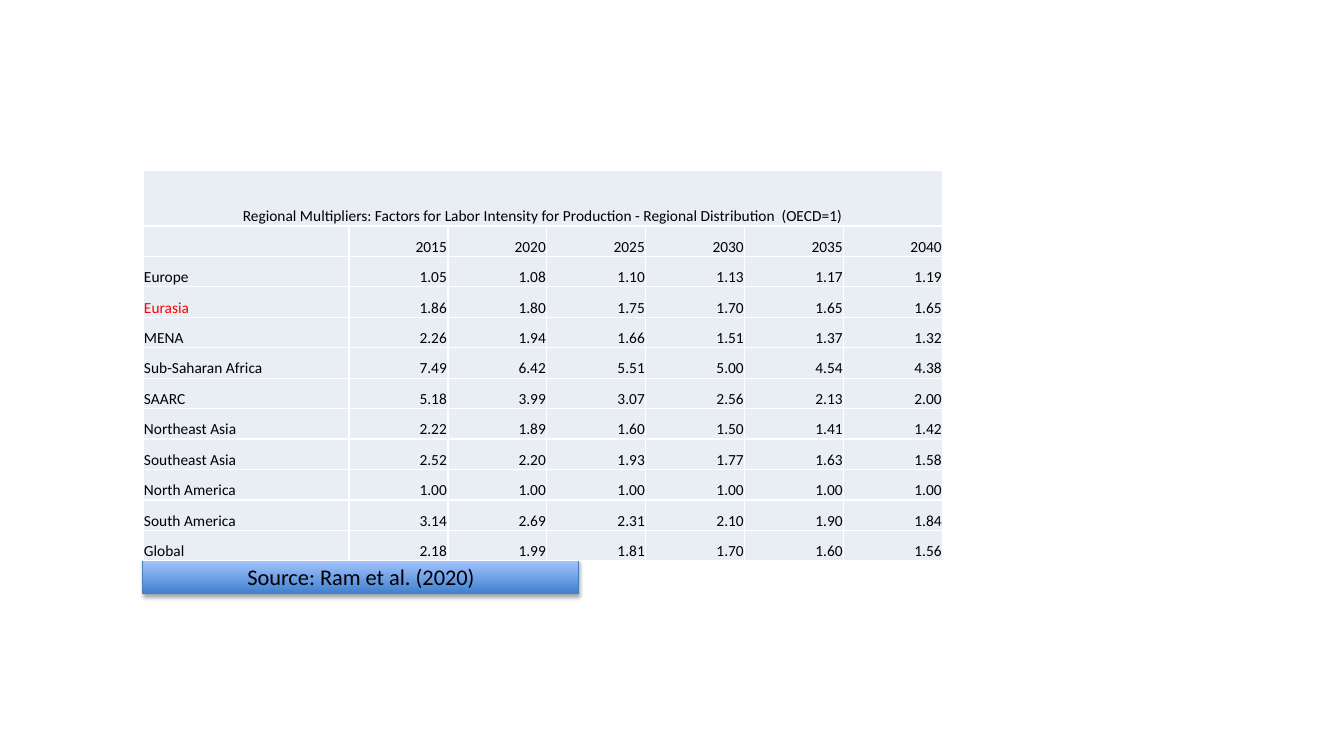
from dataclasses import dataclass

from lxml import etree
from pptx import Presentation
from pptx import util as u
from pptx.dml.color import RGBColor
from pptx.enum import shapes, text
from pptx.oxml import ns

EMU_PER_PX = 914400 / 100.8


@dataclass(frozen=True)
class Theme:
    font: str = "Calibri"
    ink: str = "000000"
    highlight: str = "FF0000"
    cell: str = "E9EDF4"
    border: str = "FFFFFF"
    gradient_dark: str = "3F80CE"
    gradient_light: str = "A4C4FF"
    source_line: str = "4B7EBC"
    table_size: int = 11
    source_size: int = 16


@dataclass(frozen=True)
class Region:
    name: str
    factors: str
    color: str


THEME = Theme()
ALIGN = text.PP_ALIGN

TITLE = ("Regional Multipliers: Factors for Labor Intensity for Production"
         " - Regional Distribution  (OECD=1)")
REGIONS = [
    Region("", "2015 2020 2025 2030 2035 2040", THEME.ink),
    Region("Europe", "1.05 1.08 1.10 1.13 1.17 1.19", THEME.ink),
    Region("Eurasia", "1.86 1.80 1.75 1.70 1.65 1.65", THEME.highlight),
    Region("MENA", "2.26 1.94 1.66 1.51 1.37 1.32", THEME.ink),
    Region("Sub-Saharan Africa", "7.49 6.42 5.51 5.00 4.54 4.38", THEME.ink),
    Region("SAARC", "5.18 3.99 3.07 2.56 2.13 2.00", THEME.ink),
    Region("Northeast Asia", "2.22 1.89 1.60 1.50 1.41 1.42", THEME.ink),
    Region("Southeast Asia", "2.52 2.20 1.93 1.77 1.63 1.58", THEME.ink),
    Region("North America", "1.00 1.00 1.00 1.00 1.00 1.00", THEME.ink),
    Region("South America", "3.14 2.69 2.31 2.10 1.90 1.84", THEME.ink),
    Region("Global", "2.18 1.99 1.81 1.70 1.60 1.56", THEME.ink),
]
NAME_WIDTH, YEAR_WIDTH, YEARS = 206, 99, 6
TITLE_HEIGHT, REGIONS_HEIGHT = 56, 335


def px(length: int) -> int:
    return round(length * EMU_PER_PX)


def rgb(color: str) -> RGBColor:
    return RGBColor.from_string(color)


def write(frame, words: str, size: int, align, color: str) -> None:
    frame.text = words
    paragraph = frame.paragraphs[0]
    paragraph.alignment = align
    for run in paragraph.runs:
        run.font.name = THEME.font
        run.font.size = u.Pt(size)
        run.font.color.rgb = rgb(color)
    if not words:  # keeps the empty cell from stretching its row
        etree.SubElement(paragraph._p, ns.qn("a:endParaRPr"), sz=str(size * 100))


def draw_borders(cell) -> None:
    properties = cell._tc.get_or_add_tcPr()
    for side in ("lnL", "lnR", "lnT", "lnB"):
        line = etree.SubElement(properties, ns.qn(f"a:{side}"), w=str(u.Pt(1)))
        fill = etree.SubElement(line, ns.qn("a:solidFill"))
        etree.SubElement(fill, ns.qn("a:srgbClr"), val=THEME.border)


def style_cell(cell) -> None:
    draw_borders(cell)
    cell.fill.solid()
    cell.fill.fore_color.rgb = rgb(THEME.cell)
    cell.margin_left = cell.margin_right = cell.margin_top = px(1)
    cell.margin_bottom = 0
    cell.vertical_anchor = text.MSO_ANCHOR.BOTTOM


def draw_source(slide) -> None:
    source = slide.shapes.add_shape(
        shapes.MSO_SHAPE.RECTANGLE, px(143), px(560), px(436), px(34))
    source.fill.gradient()
    source.fill.gradient_angle = 90
    colors = (THEME.gradient_dark, THEME.gradient_light)
    for position, (stop, color) in enumerate(zip(source.fill.gradient_stops, colors)):
        stop.position = position
        stop.color.rgb = rgb(color)
    source.line.color.rgb = rgb(THEME.source_line)
    source.line.width = u.Pt(0.75)

    # Soft shadow below the box
    source.shadow.inherit = False
    effects = source._element.spPr.find(ns.qn("a:effectLst"))
    shadow = etree.SubElement(
        effects, ns.qn("a:outerShdw"), blurRad=str(u.Pt(3.1)),
        dist=str(u.Pt(1.8)), dir="5400000", rotWithShape="0")
    tint = etree.SubElement(shadow, ns.qn("a:srgbClr"), val=THEME.ink)
    etree.SubElement(tint, ns.qn("a:alpha"), val="35000")

    source.text_frame.vertical_anchor = text.MSO_ANCHOR.MIDDLE
    write(source.text_frame, "Source: Ram et al. (2020)",
          THEME.source_size, ALIGN.CENTER, THEME.ink)


def draw_multipliers(slide) -> None:
    multipliers = slide.shapes.add_table(
        len(REGIONS) + 1, YEARS + 1, px(143), px(170),
        px(NAME_WIDTH + YEARS * YEAR_WIDTH),
        px(TITLE_HEIGHT + REGIONS_HEIGHT)).table
    multipliers.first_row = multipliers.horz_banding = False
    for index, column in enumerate(multipliers.columns):
        column.width = px(YEAR_WIDTH if index else NAME_WIDTH)
    for index, row in enumerate(multipliers.rows):
        row.height = px(REGIONS_HEIGHT) // len(REGIONS) if index else px(TITLE_HEIGHT)
    for cell in multipliers.iter_cells():
        style_cell(cell)

    # Title across all columns
    title = multipliers.cell(0, 0)
    title.merge(multipliers.cell(0, YEARS))
    write(title.text_frame, TITLE, THEME.table_size, ALIGN.CENTER, THEME.ink)

    # Years, then one row per region
    for row, region in enumerate(REGIONS, start=1):
        write(multipliers.cell(row, 0).text_frame, region.name,
              THEME.table_size, ALIGN.LEFT, region.color)
        for column, factor in enumerate(region.factors.split(), start=1):
            write(multipliers.cell(row, column).text_frame, factor,
                  THEME.table_size, ALIGN.RIGHT, THEME.ink)


def main() -> None:
    deck = Presentation()
    deck.slide_width, deck.slide_height = px(1344), px(756)
    slide = deck.slides.add_slide(deck.slide_layouts[6])
    draw_source(slide)
    draw_multipliers(slide)
    deck.save("out.pptx")


if __name__ == "__main__":
    main()
